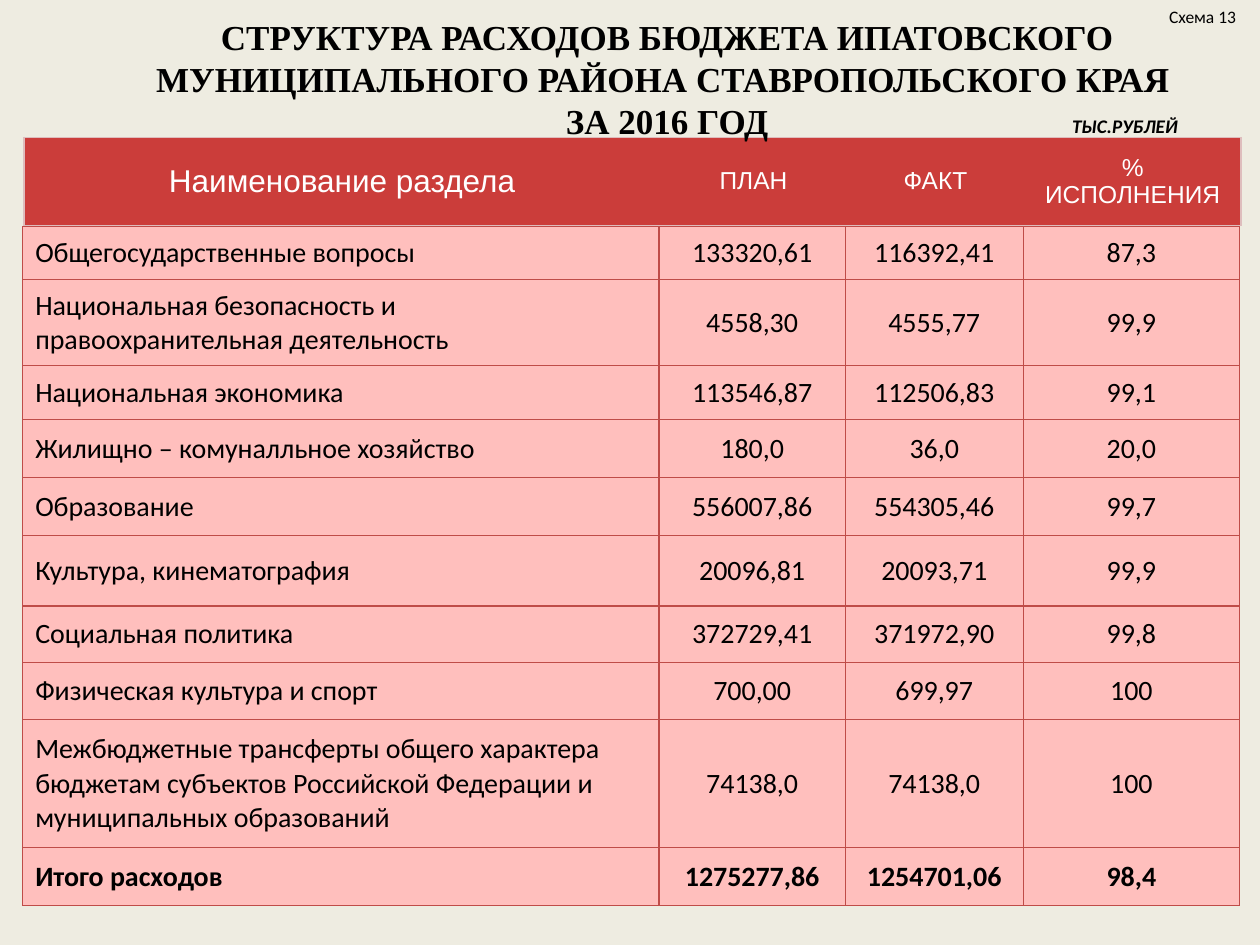
from dataclasses import dataclass

from lxml import etree
from pptx import Presentation
from pptx import util as u
from pptx.dml.color import RGBColor
from pptx.enum import text
from pptx.oxml.ns import qn

CENTER, LEFT = text.PP_ALIGN.CENTER, text.PP_ALIGN.LEFT
COLUMNS = (5.05, 1.48, 1.41, 1.72)


@dataclass(frozen=True)
class Style:
    size: int
    font: str = "Calibri"
    color: str = "000000"
    bold: bool = False
    italic: bool = False
    align: text.PP_ALIGN = LEFT


@dataclass(frozen=True)
class Label:
    lines: tuple[str, ...]
    left: float
    top: float
    width: float
    height: float
    style: Style
    wrap: bool = False


@dataclass(frozen=True)
class Row:
    height: float
    cells: tuple[str, ...]
    bold: bool = False


LABELS = (
    Label(("СТРУКТУРА РАСХОДОВ БЮДЖЕТА ИПАТОВСКОГО МУНИЦИПАЛЬНОГО РАЙОНА СТАВРОПОЛЬСКОГО КРАЯ ",
           "ЗА 2016 ГОД"), 0.78, 0.14, 9.03, 0.96,
          Style(20, "Times New Roman", bold=True, align=CENTER), wrap=True),
    Label(("Схема 13",), 9.18, 0, 0.74, 0.27, Style(10)),
    Label(("ТЫС.РУБЛЕЙ",), 8.41, 0.86, 1.05, 0.29, Style(11, bold=True, italic=True)),
)
HEADER = Row(0.7, ("Наименование раздела", "ПЛАН", "ФАКТ", "% ИСПОЛНЕНИЯ"))
ROWS = (
    Row(0.42, ("Общегосударственные вопросы", "133320,61", "116392,41", "87,3")),
    Row(0.68, ("Национальная безопасность и правоохранительная деятельность",
               "4558,30", "4555,77", "99,9")),
    Row(0.43, ("Национальная экономика", "113546,87", "112506,83", "99,1")),
    Row(0.46, ("Жилищно – комуналльное хозяйство", "180,0", "36,0", "20,0")),
    Row(0.46, ("Образование", "556007,86", "554305,46", "99,7")),
    Row(0.56, ("Культура, кинематография", "20096,81", "20093,71", "99,9")),
    Row(0.45, ("Социальная политика", "372729,41", "371972,90", "99,8")),
    Row(0.45, ("Физическая культура и спорт", "700,00", "699,97", "100")),
    Row(1.02, ("Межбюджетные трансферты общего характера бюджетам субъектов "
               "Российской Федерации и муниципальных образований",
               "74138,0", "74138,0", "100")),
    Row(0.46, ("Итого расходов", "1275277,86", "1254701,06", "98,4"), bold=True),
)


def rgb(color: str) -> RGBColor:
    return RGBColor.from_string(color)


def write(tf, lines: tuple[str, ...], style: Style) -> None:
    p = tf.paragraphs[0]
    p.alignment = style.align
    for i, line in enumerate(lines):
        if i:
            p.add_line_break()
        r = p.add_run()
        r.text = line
        r.font.size = u.Pt(style.size)
        r.font.name = style.font
        r.font.bold = style.bold
        r.font.italic = style.italic
        r.font.color.rgb = rgb(style.color)


def add_label(s, label: Label) -> None:
    box = (label.left, label.top, label.width, label.height)
    tf = s.shapes.add_textbox(*map(u.Inches, box)).text_frame
    tf.word_wrap = label.wrap
    if label.wrap:
        tf.vertical_anchor = text.MSO_ANCHOR.MIDDLE
    write(tf, label.lines, label.style)


def set_borders(cell, color: str, sides: str) -> None:
    tc_pr = cell._tc.get_or_add_tcPr()
    for side in "LRTB":
        ln = etree.SubElement(tc_pr, qn(f"a:ln{side}"), w=str(u.Pt(0.75)))
        if side in sides:
            fill = etree.SubElement(ln, qn("a:solidFill"))
            etree.SubElement(fill, qn("a:srgbClr"), val=color)
        else:
            etree.SubElement(ln, qn("a:noFill"))


def add_grid(s, left: float, top: float, rows: tuple[Row, ...]):
    box = (left, top, sum(COLUMNS), sum(row.height for row in rows))
    table = s.shapes.add_table(len(rows), len(COLUMNS), *map(u.Inches, box)).table
    table.first_row = table.horz_banding = False
    for column, width in zip(table.columns, COLUMNS):
        column.width = u.Inches(width)
    for line, row in zip(table.rows, rows):
        line.height = u.Inches(row.height)
    return table


def fill_cell(cell, value: str, style: Style, fill: str, border: str, sides: str) -> None:
    set_borders(cell, border, sides)
    cell.fill.solid()
    cell.fill.fore_color.rgb = rgb(fill)
    cell.vertical_anchor = text.MSO_ANCHOR.MIDDLE
    write(cell.text_frame, (value,), style)


def add_header(s) -> None:
    table = add_grid(s, 0.19, 1.09, (HEADER,))
    for i, value in enumerate(HEADER.cells):
        style = Style(14 if i else 18, "Arial", "FFFFFF", align=CENTER)
        sides = "TB" + {0: "L", len(COLUMNS) - 1: "R"}.get(i, "")
        fill_cell(table.cell(0, i), value, style, "CB3D3A", "DEBDBD", sides)


def add_body(s) -> None:
    table = add_grid(s, 0.18, 1.8, ROWS)
    for j, row in enumerate(ROWS):
        for i, value in enumerate(row.cells):
            style = Style(16, bold=row.bold, align=CENTER if i else LEFT)
            fill_cell(table.cell(j, i), value, style, "FFBFBD", "BF4C48", "LRTB")


def main() -> None:
    prs = Presentation()
    prs.slide_width, prs.slide_height = u.Inches(10), u.Inches(7.5)
    s = prs.slides.add_slide(prs.slide_layouts[6])
    s.background.fill.solid()
    s.background.fill.fore_color.rgb = rgb("EEECE1")
    add_header(s)
    add_body(s)
    for label in LABELS:
        add_label(s, label)
    prs.save("out.pptx")


if __name__ == "__main__":
    main()
